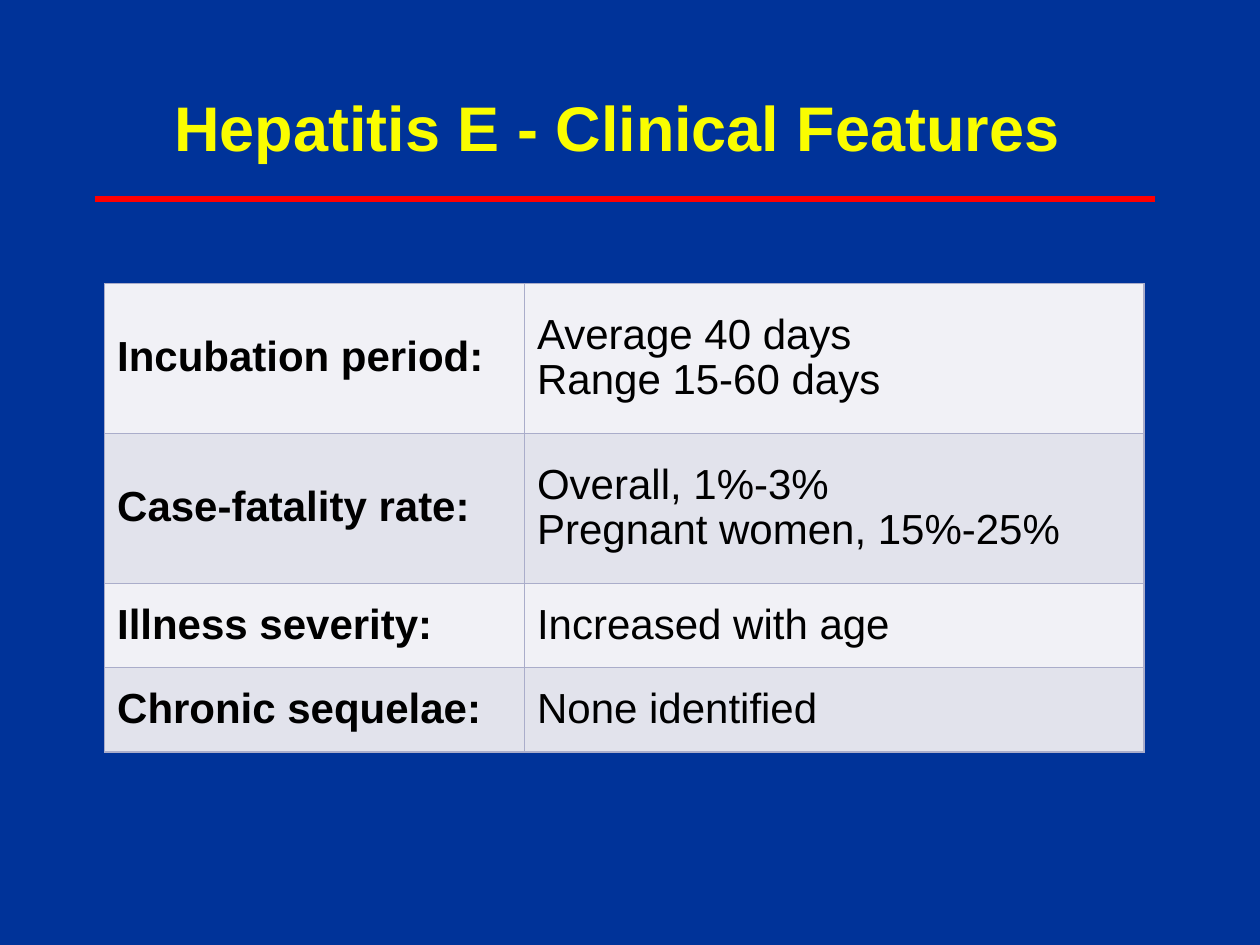
import pptx
import pptx.dml.color
import pptx.enum.shapes
import pptx.enum.text
import pptx.oxml
import pptx.oxml.ns
import pptx.util

RGBColor = pptx.dml.color.RGBColor
NAVY = RGBColor(0x00, 0x33, 0x99)
YELLOW = RGBColor(0xFA, 0xFD, 0x00)
RED = RGBColor(0xFF, 0x00, 0x00)
BLACK = RGBColor(0x00, 0x00, 0x00)
BORDER = RGBColor(0xAA, 0xAD, 0xCA)
BANDS = (RGBColor(0xF1, 0xF1, 0xF6), RGBColor(0xE2, 0xE3, 0xEC))

WIDTH = pptx.util.Inches(10)
HEIGHT = pptx.util.Inches(7.5)
MIDDLE = pptx.enum.text.MSO_ANCHOR.MIDDLE
ALIGN = pptx.enum.text.PP_ALIGN

TITLE_FONT = {"name": "Arial", "size": pptx.util.Pt(36), "bold": True}
LABEL_FONT = {"name": "Arial", "size": pptx.util.Pt(24), "bold": True}
VALUE_FONT = {**LABEL_FONT, "bold": False}

FEATURES = [
    ("Incubation period:", "Average 40 days\nRange 15-60 days"),
    ("Case-fatality rate:", "Overall, 1%-3%\vPregnant women, 15%-25%"),
    ("Illness severity:", "Increased with age"),
    ("Chronic sequelae:", "None identified"),
]
COLUMN_SHARES = (0.404, 0.596)
ROW_SHARES = (0.32, 0.32, 0.18, 0.18)


def inches_box(left, top, width, height):
    return tuple(pptx.util.Inches(length) for length in (left, top, width, height))


def write_text(frame, text, font_format, color, paragraph_format):
    frame.text = text
    for paragraph in frame.paragraphs:
        for name, value in paragraph_format.items():
            setattr(paragraph, name, value)
        for run in paragraph.runs:
            for name, value in font_format.items():
                setattr(run.font, name, value)
            run.font.color.rgb = color


def add_title(slide, box):
    frame = slide.shapes.add_textbox(*box).text_frame
    frame.word_wrap = True
    frame.vertical_anchor = MIDDLE
    write_text(frame, "Hepatitis E - Clinical Features", TITLE_FONT, YELLOW,
               {"alignment": ALIGN.CENTER})


def add_rule(slide, box):
    left, top, width, height = box
    rule = slide.shapes.add_connector(
        pptx.enum.shapes.MSO_CONNECTOR.STRAIGHT, left, top, left + width, top + height)
    rule.line.color.rgb = RED
    rule.line.width = pptx.util.Pt(3)
    rule._element.spPr.append(pptx.oxml.parse_xml(
        f"<a:effectLst {pptx.oxml.ns.nsdecls('a')}/>"))


def add_cell_borders(cell):
    properties = cell._tc.get_or_add_tcPr()
    for index, side in enumerate(("lnL", "lnR", "lnT", "lnB")):
        properties.insert(index, pptx.oxml.parse_xml(
            f'<a:{side} {pptx.oxml.ns.nsdecls("a")} w="{pptx.util.Pt(1)}">'
            f'<a:solidFill><a:srgbClr val="{BORDER}"/></a:solidFill></a:{side}>'))


def add_features_table(slide, box):
    width, height = box[2:]
    table = slide.shapes.add_table(len(FEATURES), len(COLUMN_SHARES), *box).table
    table.first_row = False
    table.horz_banding = False
    for column, share in zip(table.columns, COLUMN_SHARES):
        column.width = round(width * share)
    for row_index, texts in enumerate(FEATURES):
        row = table.rows[row_index]
        row.height = round(height * ROW_SHARES[row_index])
        for cell, text, font_format in zip(row.cells, texts, (LABEL_FONT, VALUE_FONT)):
            cell.vertical_anchor = MIDDLE
            cell.fill.solid()
            cell.fill.fore_color.rgb = BANDS[row_index % 2]
            add_cell_borders(cell)
            write_text(cell.text_frame, text, font_format, BLACK,
                       {"alignment": ALIGN.LEFT, "line_spacing": 0.96})


def main():
    presentation = pptx.Presentation()
    presentation.slide_width = WIDTH
    presentation.slide_height = HEIGHT
    slide = presentation.slides.add_slide(presentation.slide_layouts[6])
    slide.background.fill.solid()
    slide.background.fill.fore_color.rgb = NAVY
    add_title(slide, inches_box(0.75, 0.5, 8.3, 1))
    add_rule(slide, inches_box(0.75, 1.58, 8.42, 0))
    add_features_table(slide, inches_box(0.83, 2.25, 8.25, 3.72))
    presentation.save("out.pptx")


if __name__ == "__main__":
    main()
